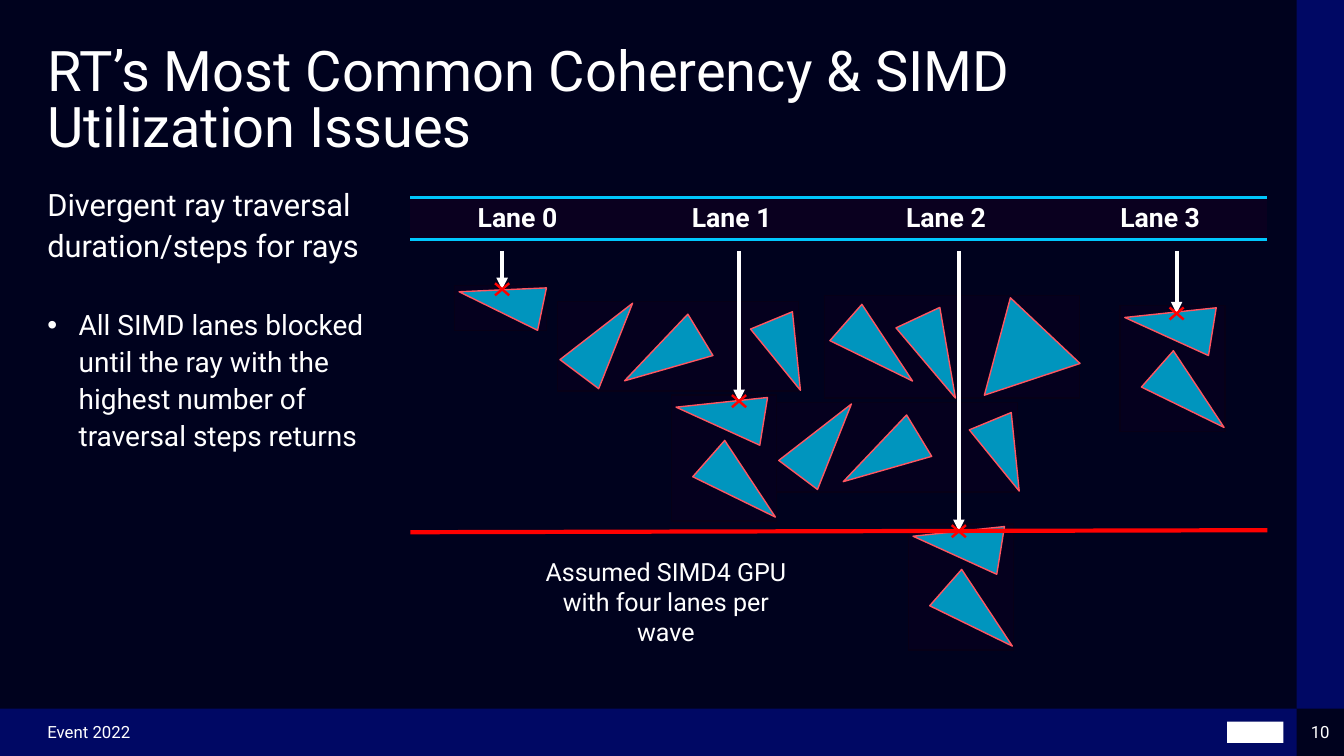
import lxml.etree
import pptx
import pptx.dml.color
import pptx.enum.shapes
import pptx.enum.text
import pptx.oxml.ns
import pptx.util

Inches = pptx.util.Inches
Pt = pptx.util.Pt
SHAPE = pptx.enum.shapes.MSO_SHAPE
ALIGN = pptx.enum.text.PP_ALIGN
ANCHOR = pptx.enum.text.MSO_ANCHOR
qn = pptx.oxml.ns.qn

NIGHT, NAVY, PLUM = "00021E", "000864", "0A001F"
WHITE, RED, CYAN = "FFFFFF", "FF0000", "00C7FD"


def hue(code):
    return pptx.dml.color.RGBColor.from_string(code)


def add(node, tag, **attrs):
    return lxml.etree.SubElement(node, qn(tag), **attrs)


# Basic parts
def style(para, size, align=None, bold=None, space=None):
    para.alignment = align
    para.line_spacing = space
    for run in para.runs:
        run.font.name = "Roboto"
        run.font.size = Pt(size)
        run.font.bold = bold
        run.font.color.rgb = hue(WHITE)


def frame(shape, anchor, pad=(0, 0)):
    text = shape.text_frame
    text.word_wrap = True
    text.vertical_anchor = anchor
    text.margin_left = text.margin_right = Inches(pad[0])
    text.margin_top = text.margin_bottom = Inches(pad[1])
    return text


def label(slide, box, words, size, align=None, anchor=ANCHOR.TOP, pad=(0, 0), space=None):
    text = frame(slide.shapes.add_textbox(*map(Inches, box)), anchor, pad)
    text.text = words
    for para in text.paragraphs:
        style(para, size, align, space=space)
    return text


def block(slide, box, fill, edge=None, kind=SHAPE.RECTANGLE, turn=0):
    shape = slide.shapes.add_shape(kind, *map(Inches, box))
    shape.shadow.inherit = False
    shape.rotation = turn
    shape.fill.solid()
    shape.fill.fore_color.rgb = hue(fill)
    if edge:
        shape.line.color.rgb = hue(edge)
        shape.line.width = Pt(1)
    else:
        shape.line.fill.background()
    return shape


def stroke(slide, x1, y1, x2, y2, color, width, arrow=False):
    line = slide.shapes.add_connector(
        pptx.enum.shapes.MSO_CONNECTOR.STRAIGHT, *map(Inches, (x1, y1, x2, y2)))
    line.line.color.rgb = hue(color)
    line.line.width = Pt(width)
    props = line._element.spPr
    if arrow:
        add(props.find(qn("a:ln")), "a:tailEnd", type="triangle")
    add(props, "a:effectLst")


def halo(slide, box):
    shape = block(slide, box, PLUM, "070017")
    add(shape._element.spPr.find(".//" + qn("a:srgbClr")), "a:alpha", val="50000")


def shard(slide, x, y, turn, wide=0.48, high=0.88):
    block(slide, (x, y, wide, high), "0095BE", "FF5661", SHAPE.ISOSCELES_TRIANGLE, turn)


# Groups of triangles
def pair(slide, x, y):
    halo(slide, (x - 0.24, y + 0.25, 1.04, 1.25))
    shard(slide, x, y, 279.2)
    shard(slide, x + 0.22, y + 0.73, 131.3)


def trio(slide, x, y):
    halo(slide, (x - 0.24, y + 0.07, 2.39, 0.89))
    shard(slide, x, y, 36.9)
    shard(slide, x + 0.56, y + 0.19, 238.8)
    shard(slide, x + 1.8, y + 0.23, 157.5, 0.45, 0.75)


# Regions of the slide
def edges(slide, wide, high, band):
    side, foot = wide - band, high - band
    block(slide, (0, foot, side, band), NAVY)
    block(slide, (side, 0, band, foot), NAVY)
    block(slide, (side - 0.69, foot + 0.13, 0.56, 0.21), WHITE)
    label(slide, (band, foot, 3.52, band), "Event 2022", 12, anchor=ANCHOR.MIDDLE)
    label(slide, (side, foot, band, band), "10", 12, ALIGN.CENTER, ANCHOR.MIDDLE)


def title(slide, box):
    head = slide.shapes.title
    head.left, head.top, head.width, head.height = map(Inches, box)
    text = frame(head, ANCHOR.TOP)
    text.auto_size = pptx.enum.text.MSO_AUTO_SIZE.NONE
    text.text = "RT’s Most Common Coherency & SIMD Utilization Issues"
    style(text.paragraphs[0], 40, ALIGN.LEFT, space=0.83)


def body(slide, box):
    text = label(slide, box, "Divergent ray traversal duration/steps for rays", 22, space=1.1)
    point = text.add_paragraph()
    point.text = ("All SIMD lanes blocked until the ray with the highest "
                  "number of traversal steps returns")
    style(point, 20, space=1.1)
    point.space_before = Pt(29)
    props = point._p.get_or_add_pPr()
    props.set("marL", str(Inches(0.31)))
    props.set("indent", str(-Inches(0.31)))
    add(props, "a:buFont", typeface="Arial")
    add(props, "a:buChar", char="•")


def lanes(slide, box):
    table = slide.shapes.add_table(1, 4, *map(Inches, box)).table
    table.first_row = table.horz_banding = False
    for num, cell in enumerate(table.rows[0].cells):
        cell.text = f"Lane {num}"
        style(cell.text_frame.paragraphs[0], 19, ALIGN.CENTER, True)
        props = cell._tc.get_or_add_tcPr()
        for side in "LR":
            add(add(props, "a:ln" + side, w="0"), "a:noFill")
        for side in "TB":
            rule = add(props, "a:ln" + side, w=str(Pt(2.25)))
            add(add(rule, "a:solidFill"), "a:srgbClr", val=CYAN)
        cell.fill.solid()
        cell.fill.fore_color.rgb = hue(PLUM)


def field(slide, left, top, wide):
    # Triangles
    halo(slide, (left + 0.44, top + 0.34, 0.91, 0.45))
    halo(slide, (left + 4.11, top + 0.44, 2.53, 1.02))
    for x, y in [(1.7, 0.43), (3.87, 1.43)]:
        trio(slide, left + x, top + y)
    for x, y in [(2.83, 1.18), (5.18, 2.46), (7.28, 0.29)]:
        pair(slide, left + x, top + y)
    for x, y, *form in [(0.68, 0.07, 281.8, 0.43, 0.84), (4.41, 0.56, 131.3),
                        (4.98, 0.62, 155), (5.52, 0.67, 223.3, 0.95)]:
        shard(slide, left + x, top + y, *form)

    # Rays, the wave's end line and the hits
    rays = [(left + x, top + drop) for x, drop in
            [(0.91, 0.38), (3.26, 1.49), (5.44, 2.78), (7.6, 0.62)]]
    for x, y in rays:
        stroke(slide, x, top, x, y, WHITE, 2.75, True)
    stroke(slide, left, top + 2.79, left + wide, top + 2.77, RED, 3)
    for x, y in rays:
        for rise in (0.06, -0.06):
            stroke(slide, x - 0.07, y - rise, x + 0.07, y + rise, RED, 1.75)


def main():
    deck = pptx.Presentation()
    wide, high = 13.33, 7.5
    deck.slide_width, deck.slide_height = Inches(wide), Inches(high)
    slide = deck.slides.add_slide(deck.slide_layouts[5])
    slide.background.fill.solid()
    slide.background.fill.fore_color.rgb = hue(NIGHT)

    edges(slide, wide, high, 0.47)
    title(slide, (0.47, 0.47, 11.91, 1.34))
    body(slide, (0.47, 1.81, 3.4, 4.84))
    lanes(slide, (4.07, 1.96, 8.5, 0.41))
    label(slide, (5.25, 5.47, 2.71, 0.7), "Assumed SIMD4 GPU\nwith four lanes per wave",
          17.9, ALIGN.CENTER, pad=(0.1, 0.05))
    field(slide, 4.07, 2.49, 8.5)
    deck.save("out.pptx")


if __name__ == "__main__":
    main()
